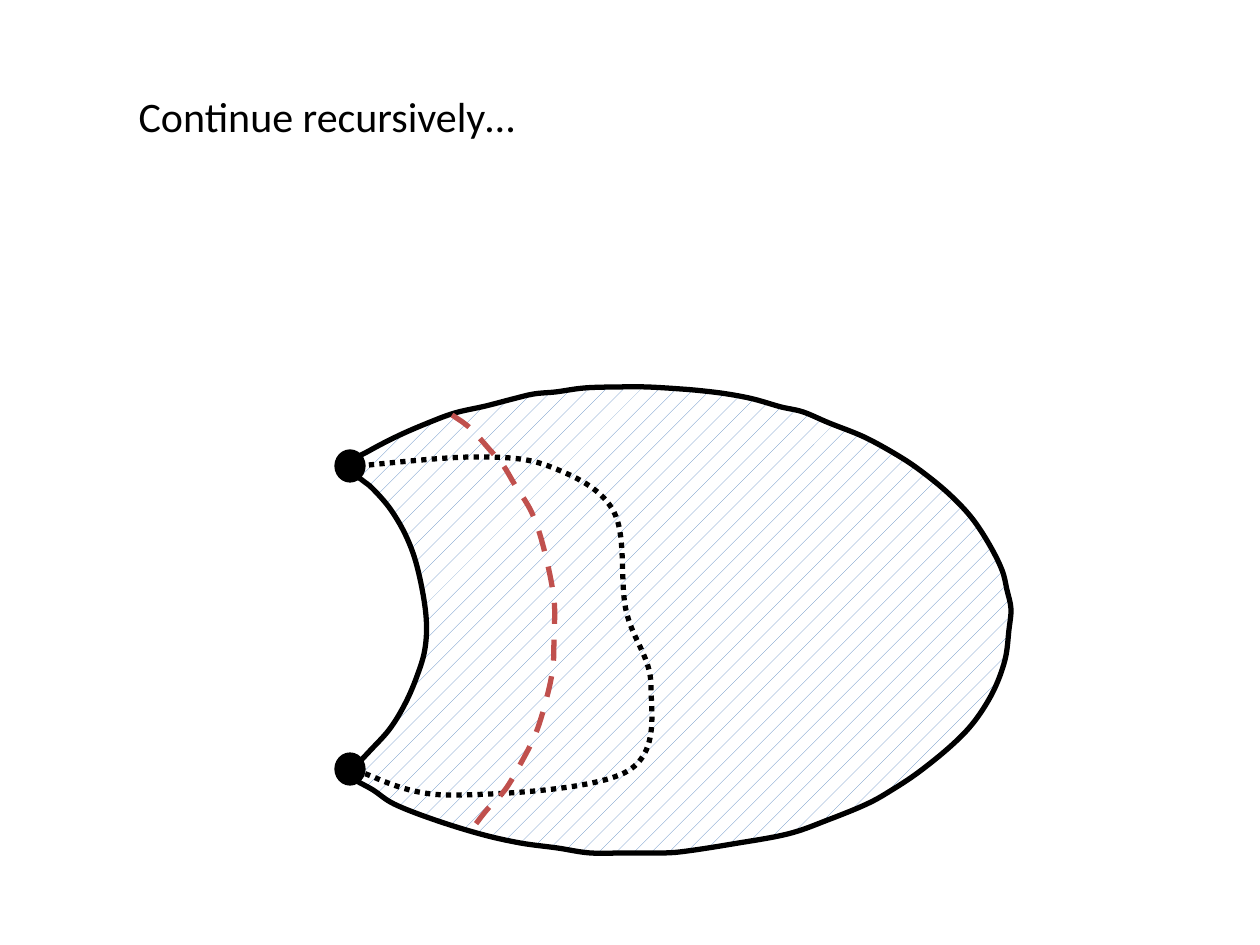
from dataclasses import dataclass
from typing import Any, Optional

from lxml.etree import SubElement
from pptx import Presentation
from pptx.dml.color import RGBColor
from pptx.enum.dml import MSO_LINE_DASH_STYLE as Dash, MSO_PATTERN_TYPE as Pattern
from pptx.enum.shapes import MSO_AUTO_SHAPE_TYPE as ShapeType
from pptx.enum.text import MSO_ANCHOR as Anchor, MSO_AUTO_SIZE as AutoSize, PP_ALIGN as Align
from pptx.oxml.ns import qn
from pptx.util import Emu, Pt

EMU_PER_PX = 914400 / 126
BLACK, WHITE, BLUE, RED = "000000", "FFFFFF", "4F81BD", "C0504D"
Points = list[tuple[int, int]]


@dataclass
class Curve:
    """A smooth line through knots given in px."""
    knots: Points
    color: str = BLACK
    dash: Optional[Dash] = None
    closed: bool = False


@dataclass
class Vertex:
    """A round end point of the region, placed by its centre in px."""
    x: int
    y: int
    width: int = 30
    height: int = 32


REGION = Curve([
    (345, 466), (369, 451), (398, 436), (428, 423), (455, 413), (486, 406), (513, 399),
    (534, 394), (556, 392), (585, 388), (619, 387), (646, 387), (680, 389), (703, 391),
    (727, 394), (753, 399), (781, 407), (803, 412), (829, 423), (864, 437), (897, 455),
    (921, 471), (948, 493), (971, 517), (989, 544), (1002, 570), (1007, 590), (1011, 609),
    (1009, 630), (1005, 660), (993, 692), (974, 722), (951, 746), (919, 772), (892, 790),
    (867, 804), (828, 820), (788, 834), (733, 844), (688, 851), (665, 853), (626, 853),
    (590, 853), (557, 848), (520, 843), (480, 834), (432, 819), (394, 804), (373, 790),
    (355, 780), (349, 774), (368, 753), (389, 730), (404, 706), (416, 679), (425, 649),
    (426, 615), (418, 570), (407, 538), (391, 510), (373, 489), (362, 480),
], closed=True)
DOTTED_PATH = Curve([
    (348, 467), (474, 457), (551, 467), (614, 512), (626, 610), (651, 685), (626, 772),
    (449, 795), (360, 772),
], dash=Dash.ROUND_DOT)
DASHED_CUT = Curve([
    (452, 415), (470, 428), (490, 450), (503, 465), (515, 485), (532, 513), (544, 549),
    (554, 599), (554, 638), (553, 667), (547, 697), (536, 733), (520, 765), (505, 790),
    (486, 811), (470, 832),
], color=RED, dash=Dash.DASH)
VERTICES = [Vertex(350, 466), Vertex(350, 769)]


def px(length: int) -> Emu:
    """Turn px into EMU."""
    return Emu(round(length * EMU_PER_PX))


def rgb(color: str) -> RGBColor:
    """Turn a hex string into a colour."""
    return RGBColor.from_string(color)


def apply(target: Any, values: dict[str, Any]) -> None:
    """Set every attribute in values on target."""
    for name, value in values.items():
        setattr(target, name, value)


def set_line(shape: Any, color: str, width: float, dash: Optional[Dash] = None) -> None:
    """Give a shape its line and take away its shadow."""
    shape.shadow.inherit = False
    shape.line.color.rgb = rgb(color)
    apply(shape.line, {"width": Pt(width), "dash_style": dash})


def smooth_path(shape: Any, closed: bool) -> None:
    """Replace straight segments by Bezier segments through the same knots."""
    path = shape._element.find(".//" + qn("a:path"))
    knots = [(int(point.get("x")), int(point.get("y"))) for point in path.iter(qn("a:pt"))]
    before, after = (knots[-2], knots[1]) if closed else (knots[0], knots[-1])
    padded = [before, *knots, after]
    for index, segment in enumerate(path.findall(qn("a:lnTo"))):
        previous, start, end, following = padded[index:index + 4]
        leaving = [s + (e - p) / 6 for p, s, e in zip(previous, start, end)]
        arriving = [e - (f - s) / 6 for s, e, f in zip(start, end, following)]
        bezier = path.makeelement(qn("a:cubicBezTo"))
        for x, y in (leaving, arriving, end):
            SubElement(bezier, qn("a:pt"), x=str(round(x)), y=str(round(y)))
        path.replace(segment, bezier)


def draw_curve(group: Any, curve: Curve) -> Any:
    """Draw one smooth unfilled curve."""
    start, *others = [(px(x), px(y)) for x, y in curve.knots]
    if curve.closed:
        others.append(start)
    builder = group.shapes.build_freeform(*start, scale=1.0)
    builder.add_line_segments(others, close=curve.closed)
    shape = builder.convert_to_shape()
    smooth_path(shape, curve.closed)
    shape.fill.background()
    set_line(shape, curve.color, 3, curve.dash)
    return shape


def draw_vertex(group: Any, vertex: Vertex) -> None:
    """Draw one black end point."""
    shape = group.shapes.add_shape(
        ShapeType.OVAL, px(vertex.x - vertex.width // 2), px(vertex.y - vertex.height // 2),
        px(vertex.width), px(vertex.height))
    shape.fill.solid()
    shape.fill.fore_color.rgb = rgb(BLACK)
    set_line(shape, BLACK, 0.75)


def write_title(title: Any, text: str) -> None:
    """Place and format the slide title."""
    apply(title, {"left": px(126), "top": px(84), "width": px(1113), "height": px(63)})
    apply(title.text_frame, {"text": text, "word_wrap": True, "auto_size": AutoSize.NONE,
                             "vertical_anchor": Anchor.TOP})
    paragraph = title.text_frame.paragraphs[0]
    paragraph.alignment = Align.LEFT
    font = paragraph.runs[0].font
    apply(font, {"name": "Calibri", "size": Pt(24)})
    font.color.rgb = rgb(BLACK)


def main() -> None:
    """Build the slide and save it."""
    presentation = Presentation()
    apply(presentation, {"slide_width": px(1260), "slide_height": px(945)})
    slide = presentation.slides.add_slide(presentation.slide_layouts[5])
    write_title(slide.shapes.title, "Continue recursively…")
    group = slide.shapes.add_group_shape()
    region = draw_curve(group, REGION)
    region.fill.patterned()
    region.fill.pattern = Pattern.PERCENT_5
    region.fill.fore_color.rgb = rgb(BLUE)
    region.fill.back_color.rgb = rgb(WHITE)
    for curve in (DOTTED_PATH, DASHED_CUT):
        draw_curve(group, curve)
    for vertex in VERTICES:
        draw_vertex(group, vertex)
    presentation.save("out.pptx")


if __name__ == "__main__":
    main()
